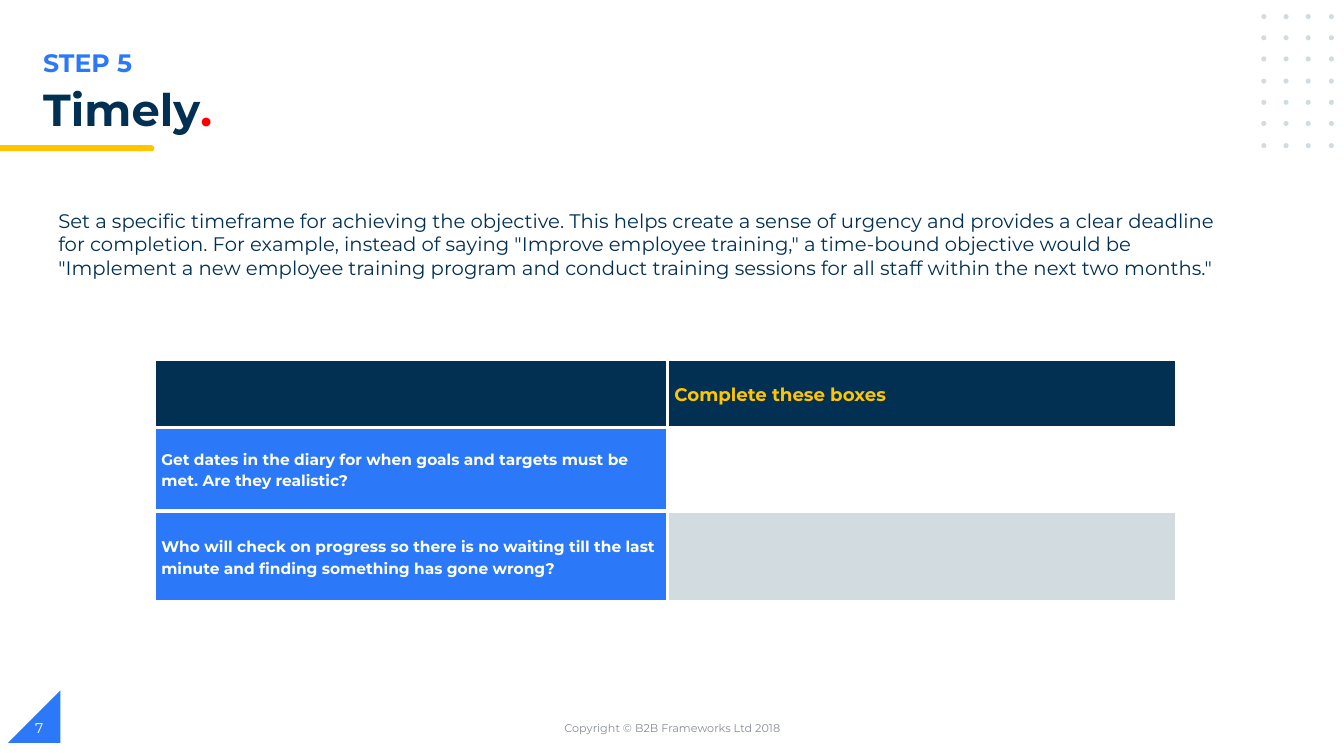
from lxml import etree
from pptx import Presentation
from pptx import util as u
from pptx.dml.color import RGBColor
from pptx.enum import shapes, text
from pptx.oxml import ns

PX = 9144  # EMU, 100 px to the inch
NAVY = RGBColor(0x02, 0x30, 0x53)
BLUE = RGBColor(0x2B, 0x79, 0xF8)
YELLOW = RGBColor(0xFF, 0xC6, 0x00)
RED = RGBColor(0xFF, 0x00, 0x00)
PALE = RGBColor(0xD1, 0xDB, 0xE0)
GREY = RGBColor(0x88, 0x8C, 0x97)
WHITE = RGBColor(0xFF, 0xFF, 0xFF)

BODY = (
    "Set a specific timeframe for achieving the objective. This helps create a sense of urgency "
    "and provides a clear deadline for completion. For example, instead of saying \"Improve employee "
    "training,\" a time-bound objective would be \"Implement a new employee training program and conduct "
    "training sessions for all staff within the next two months.\""
)
# Each cell: text, size, text colour, fill
ROWS = [
    [("", 13, YELLOW, NAVY), ("Complete these boxes", 13, YELLOW, NAVY)],
    [("Get dates in the diary for when goals and targets must be met. Are they realistic?",
      11, WHITE, BLUE), ("", 11, NAVY, WHITE)],
    [("Who will check on progress so there is no waiting till the last minute "
      "and finding something has gone wrong?", 11, WHITE, BLUE), ("", 11, NAVY, PALE)],
]


class SlideBuilder:
    font = "Montserrat"

    def __init__(self, slide):
        self.slide = slide

    def box(self, *place):
        return [length * PX for length in place]

    def format_run(self, run, size, color, bold=False):
        run.font.name = self.font
        run.font.size = u.Pt(size)
        run.font.bold = bold
        run.font.color.rgb = color

    def shape(self, kind, place, fill, flip=False):
        shape = self.slide.shapes.add_shape(kind, *self.box(*place))
        shape.shadow.inherit = False
        shape.fill.solid()
        shape.fill.fore_color.rgb = fill
        shape.line.fill.background()
        if flip:
            shape._element.spPr.get_or_add_xfrm().set("flipH", "1")

    def text(self, content, place, size, color, bold=False, middle=False, centred=False):
        frame = self.slide.shapes.add_textbox(*self.box(*place)).text_frame
        frame.word_wrap = True
        frame.vertical_anchor = text.MSO_ANCHOR.MIDDLE if middle else text.MSO_ANCHOR.TOP
        frame.text = content
        paragraph = frame.paragraphs[0]
        paragraph.alignment = text.PP_ALIGN.CENTER if centred else text.PP_ALIGN.LEFT
        self.format_run(paragraph.runs[0], size, color, bold)
        return paragraph

    def borders(self, cell, color, width):
        """Draw the four sides; must come before the cell's fill."""
        properties = cell._tc.get_or_add_tcPr()
        for side in ("lnL", "lnR", "lnT", "lnB"):
            line = etree.SubElement(properties, ns.qn(f"a:{side}"), w=str(u.Pt(width)))
            fill = etree.SubElement(line, ns.qn("a:solidFill"))
            etree.SubElement(fill, ns.qn("a:srgbClr"), val=str(color))

    def table(self, rows, left, top, widths, heights):
        place = self.box(left, top, sum(widths), sum(heights))
        table = self.slide.shapes.add_table(len(rows), len(widths), *place).table
        table.first_row = table.horz_banding = False
        for column, width in zip(table.columns, widths):
            column.width = width * PX
        for row, height, contents in zip(table.rows, heights, rows):
            row.height = height * PX
            for cell, content in zip(row.cells, contents):
                self.cell(cell, *content)

    def cell(self, cell, content, size, color, fill):
        self.borders(cell, WHITE, 3)
        cell.fill.solid()
        cell.fill.fore_color.rgb = fill
        cell.vertical_anchor = text.MSO_ANCHOR.MIDDLE
        cell.margin_left = cell.margin_right = 7 * PX
        cell.margin_top = cell.margin_bottom = 0
        if content:
            cell.text = content
            paragraph = cell.text_frame.paragraphs[0]
            paragraph.line_spacing = 1.15
            self.format_run(paragraph.runs[0], size, color, bold=True)


def main():
    presentation = Presentation()
    presentation.slide_width = u.Inches(13.33)
    presentation.slide_height = u.Inches(7.5)
    builder = SlideBuilder(presentation.slides.add_slide(presentation.slide_layouts[6]))
    kinds = shapes.MSO_SHAPE

    builder.shape(kinds.RIGHT_TRIANGLE, (8, 685, 52, 52), BLUE, flip=True)
    builder.shape(kinds.FLOWCHART_TERMINATOR, (134, 144, 19, 6), YELLOW)
    builder.shape(kinds.RECTANGLE, (0, 144, 141, 6), YELLOW)
    for row in range(7):
        for column in range(4):
            dot = (1251 + column * 67 // 3, 14 + row * 128 // 6, 5, 5)
            builder.shape(kinds.OVAL, dot, PALE)

    builder.text("STEP 5", (33, 42, 669, 40), 18, BLUE, bold=True)
    title = builder.text("Timely", (33, 82, 564, 56), 32, NAVY, bold=True)
    title.line_spacing = 0.9
    full_stop = title.add_run()
    full_stop.text = "."
    builder.format_run(full_stop, 32, RED, bold=True)

    builder.text(BODY, (48, 202, 1176, 81), 14, NAVY)
    builder.table(ROWS, 153, 356, widths=(509, 505), heights=(68, 83, 90))
    builder.text("Copyright © B2B Frameworks Ltd 2018", (442, 702, 450, 40), 8, GREY,
                 middle=True, centred=True)
    builder.text("7", (25, 702, 300, 40), 10, WHITE, middle=True)

    presentation.save("out.pptx")


if __name__ == "__main__":
    main()
